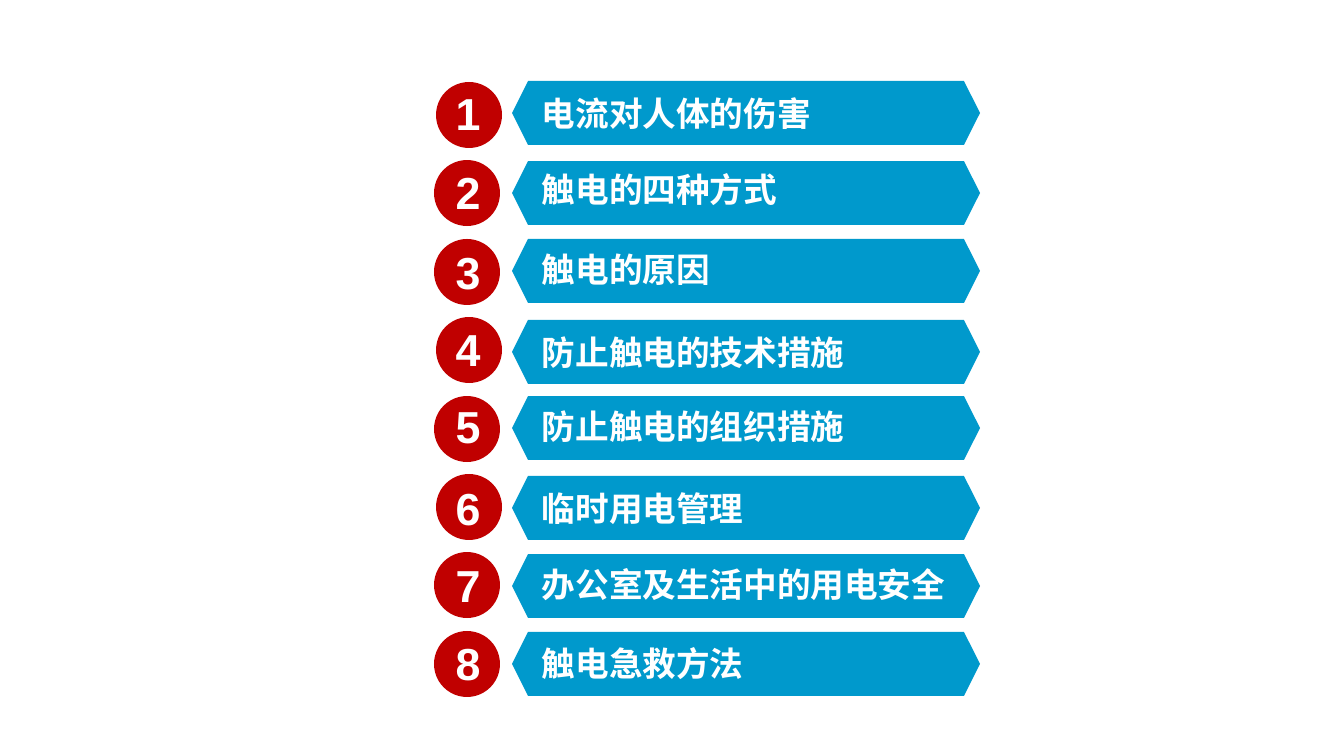
from lxml import etree
from pptx import Presentation
from pptx.dml.color import RGBColor
from pptx.enum.shapes import MSO_SHAPE
from pptx.enum.text import MSO_AUTO_SIZE, PP_ALIGN
from pptx.oxml.ns import qn
from pptx.util import Pt

HEXAGON = MSO_SHAPE.HEXAGON
OVAL = MSO_SHAPE.OVAL
CENTER = PP_ALIGN.CENTER
LEFT = PP_ALIGN.LEFT
FIT_SHAPE = MSO_AUTO_SIZE.SHAPE_TO_FIT_TEXT

BLUE = RGBColor(0x00, 0x99, 0xCC)
RED = RGBColor(0xC0, 0x00, 0x00)
WHITE = RGBColor(0xFF, 0xFF, 0xFF)

NUMBER_FONT = "Arial"
TOPIC_FONT = "Noto Sans CJK SC"

EMU_PER_PX = 914400 / 100.8
FIRST_CIRCLE_TOP = 82
CIRCLE_PITCH = 78.4
CHAR_WIDTH = 34

# topic, bar top, circle left, number top, topic top
TOPICS = [
    ("电流对人体的伤害", 81, 436, 81, 88),
    ("触电的四种方式", 161, 434, 160, 164),
    ("触电的原因", 239, 434, 240, 244),
    ("防止触电的技术措施", 320, 436, 317, 327),
    ("防止触电的组织措施", 396, 434, 394, 401),
    ("临时用电管理", 476, 436, 476, 483),
    ("办公室及生活中的用电安全", 554, 434, 553, 559),
    ("触电急救方法", 632, 434, 631, 638),
]


def px(n):
    return round(n * EMU_PER_PX)


def add_solid(slide, kind, x, y, w, h, color):
    sp = slide.shapes.add_shape(kind, px(x), px(y), px(w), px(h))
    sp.shadow.inherit = False
    sp.fill.solid()
    sp.fill.fore_color.rgb = color
    sp.line.fill.background()


def add_label(slide, text, x, y, w, h, font, size, align, wrap):
    sp = slide.shapes.add_textbox(px(x), px(y), px(w), px(h))
    tf = sp.text_frame
    tf.word_wrap = wrap
    tf.auto_size = FIT_SHAPE
    tf.text = text
    p = tf.paragraphs[0]
    p.alignment = align
    r = p.runs[0]
    r.font.name = font
    r.font.size = Pt(size)
    r.font.bold = True
    r.font.color.rgb = WHITE
    ea = etree.Element(qn("a:ea"), typeface=font)
    r.font._element.find(qn("a:latin")).addnext(ea)


def add_topic(slide, index, topic, bar_top, circle_left, number_top, topic_top):
    circle_top = round(FIRST_CIRCLE_TOP + index * CIRCLE_PITCH)
    add_solid(slide, HEXAGON, 512, bar_top, 468, 64, BLUE)
    add_solid(slide, OVAL, circle_left, circle_top, 66, 66, RED)
    add_label(slide, str(index + 1), 436, number_top, 64, 64,
              NUMBER_FONT, 32, CENTER, True)
    add_label(slide, topic, 532, topic_top, len(topic) * CHAR_WIDTH + 20, 50,
              TOPIC_FONT, 24, LEFT, False)


def main():
    prs = Presentation()
    prs.slide_width = px(1344)
    prs.slide_height = px(756)
    slide = prs.slides.add_slide(prs.slide_layouts[6])
    for index, row in enumerate(TOPICS):
        add_topic(slide, index, *row)
    prs.save("out.pptx")


if __name__ == "__main__":
    main()
